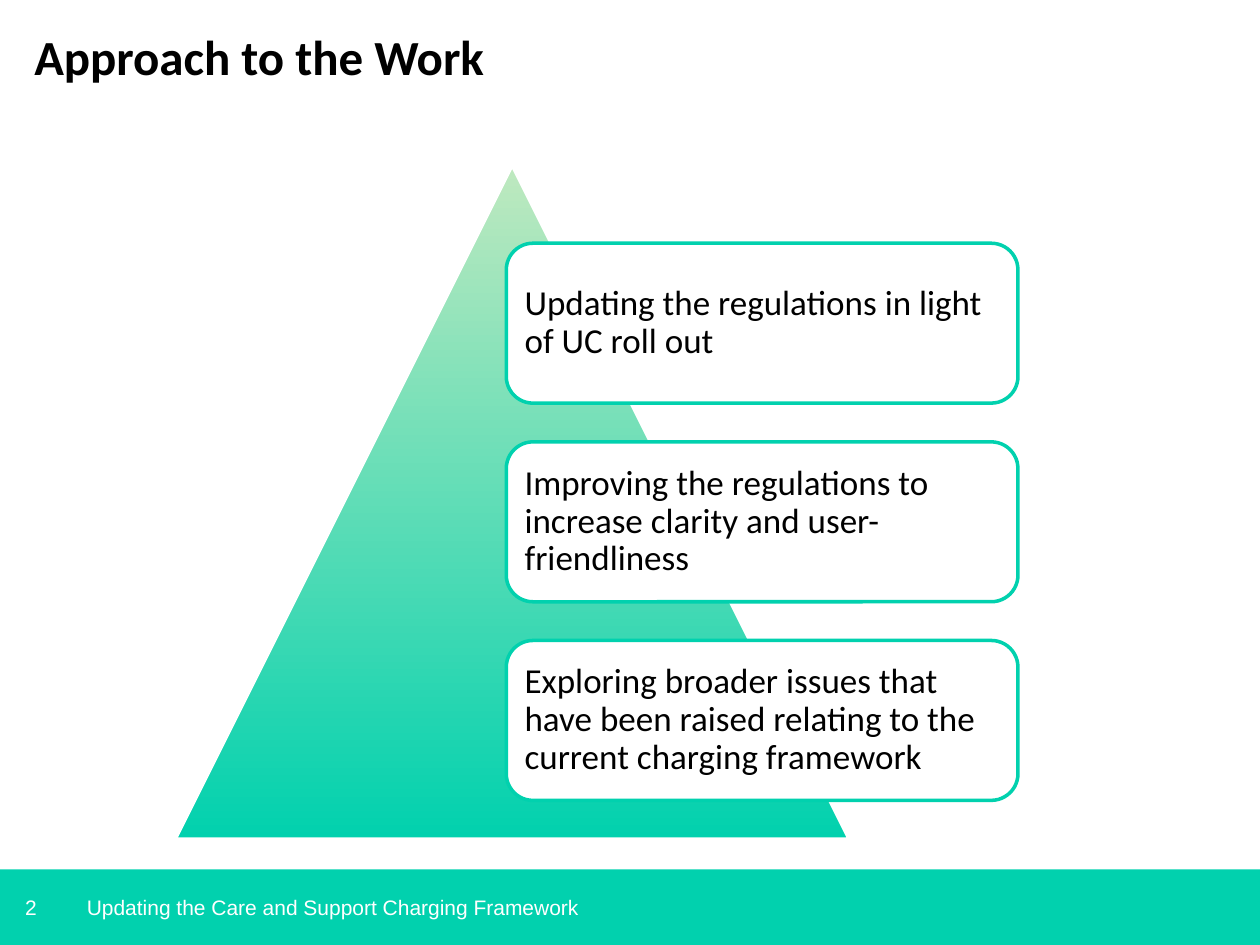
"""Build the "Approach to the Work" slide: a pyramid with three cards."""
from dataclasses import dataclass

from pptx import Presentation
from pptx.dml.color import RGBColor
from pptx.enum.shapes import MSO_SHAPE as Preset
from pptx.enum.text import MSO_ANCHOR as Anchor, PP_ALIGN as Align
from pptx.util import Pt


@dataclass(frozen=True)
class Theme:
    """Colours, fonts and type sizes of the slide."""
    teal: RGBColor = RGBColor(0x01, 0xD1, 0xAE)
    pale_green: RGBColor = RGBColor(0xBF, 0xE9, 0xBF)
    white: RGBColor = RGBColor(0xFF, 0xFF, 0xFF)
    black: RGBColor = RGBColor(0, 0, 0)
    heading_font: str = "Calibri"
    footer_font: str = "Arial"
    title_size: float = 28
    card_size: float = 20
    footer_size: float = 12
    outline: float = 2


@dataclass(frozen=True)
class Box:
    """A rectangle in points."""
    left: float
    top: float
    width: float
    height: float

    def lengths(self) -> tuple:
        """Return the four lengths for a shape call."""
        return Pt(self.left), Pt(self.top), Pt(self.width), Pt(self.height)


@dataclass(frozen=True)
class TextStyle:
    """How a block of text is set."""
    font: str
    size: float
    color: RGBColor
    bold: bool = False
    anchor: Anchor = Anchor.MIDDLE
    line_spacing: float = 1.0


THEME = Theme()
TITLE = TextStyle(THEME.heading_font, THEME.title_size, THEME.black, True, Anchor.TOP)
CARD = TextStyle(THEME.heading_font, THEME.card_size, THEME.black, line_spacing=0.9)
FOOTER = TextStyle(THEME.footer_font, THEME.footer_size, THEME.white)

FOOTER_TOP, FOOTER_HEIGHT = 496.8, 43.2
FIRST_CARD = Box(289.3, 139, 292.4, 91.4)
CARD_STEP = 113.5
CARD_INSET = 6
CARD_TEXTS = (
    "Updating the regulations in light of UC roll out",
    "Improving the regulations to increase clarity and user-friendliness",
    "Exploring broader issues that have been raised relating to the current charging framework",
)


def apply_format(target, values: dict) -> None:
    """Set each named attribute on the target."""
    for name, value in values.items():
        setattr(target, name, value)


def write_text(shape, text: str, style: TextStyle, insets: tuple = (0, 0, 0, 0)) -> None:
    """Fill a shape with one paragraph; insets run left, top, right, bottom."""
    frame = shape.text_frame
    sides = ("margin_left", "margin_top", "margin_right", "margin_bottom")
    apply_format(frame, dict(zip(sides, map(Pt, insets))))
    apply_format(frame, {"word_wrap": True, "vertical_anchor": style.anchor})
    paragraph = frame.paragraphs[0]
    apply_format(paragraph, {"alignment": Align.LEFT, "line_spacing": style.line_spacing})
    run = paragraph.add_run()
    run.text = text
    apply_format(run.font, {"name": style.font, "size": Pt(style.size), "bold": style.bold})
    run.font.color.rgb = style.color


def add_text(slide, box: Box, text: str, style: TextStyle, insets: tuple = (0, 0, 0, 0)) -> None:
    """Add a text box."""
    write_text(slide.shapes.add_textbox(*box.lengths()), text, style, insets)


def add_preset(slide, preset: Preset, box: Box, fill: RGBColor, line: RGBColor | None = None):
    """Add a flat preset shape with an optional outline."""
    shape = slide.shapes.add_shape(preset, *box.lengths())
    shape.shadow.inherit = False
    shape.fill.solid()
    shape.fill.fore_color.rgb = fill
    if line is None:
        shape.line.fill.background()
    else:
        shape.line.color.rgb = line
        shape.line.width = Pt(THEME.outline)
    return shape


def add_pyramid(slide) -> None:
    """Add the triangle, shaded from pale green down to teal."""
    box = Box(100.1, 94.3, 385.2, 385.2)
    pyramid = add_preset(slide, Preset.ISOSCELES_TRIANGLE, box, THEME.teal, THEME.white)
    pyramid.fill.gradient()
    pyramid.fill.gradient_angle = 270
    stops = ((0, THEME.pale_green), (1, THEME.teal))
    for stop, (position, color) in zip(pyramid.fill.gradient_stops, stops):
        stop.position = position
        stop.color.rgb = color


def add_cards(slide) -> None:
    """Add the evenly spaced cards over the pyramid."""
    for index, text in enumerate(CARD_TEXTS):
        top = FIRST_CARD.top + index * CARD_STEP
        box = Box(FIRST_CARD.left, top, FIRST_CARD.width, FIRST_CARD.height)
        card = add_preset(slide, Preset.ROUNDED_RECTANGLE, box, THEME.white, THEME.teal)
        write_text(card, text, CARD, (CARD_INSET,) * 4)


def main() -> None:
    """Build and save the presentation."""
    presentation = Presentation()
    apply_format(presentation, {"slide_width": Pt(720), "slide_height": Pt(540)})
    slide = presentation.slides.add_slide(presentation.slide_layouts[6])

    add_preset(slide, Preset.RECTANGLE, Box(0, FOOTER_TOP, 720, FOOTER_HEIGHT), THEME.teal)
    add_text(slide, Box(0, FOOTER_TOP, 42.5, FOOTER_HEIGHT), "2", FOOTER, (14.4, 0, 0, 0))
    add_text(slide, Box(19.6, 15.1, 620.6, 56.9), "Approach to the Work", TITLE)
    add_pyramid(slide)
    add_cards(slide)
    add_text(slide, Box(49.6, FOOTER_TOP, 620.6, FOOTER_HEIGHT),
             "Updating the Care and Support Charging Framework", FOOTER)

    presentation.save("out.pptx")


if __name__ == "__main__":
    main()
